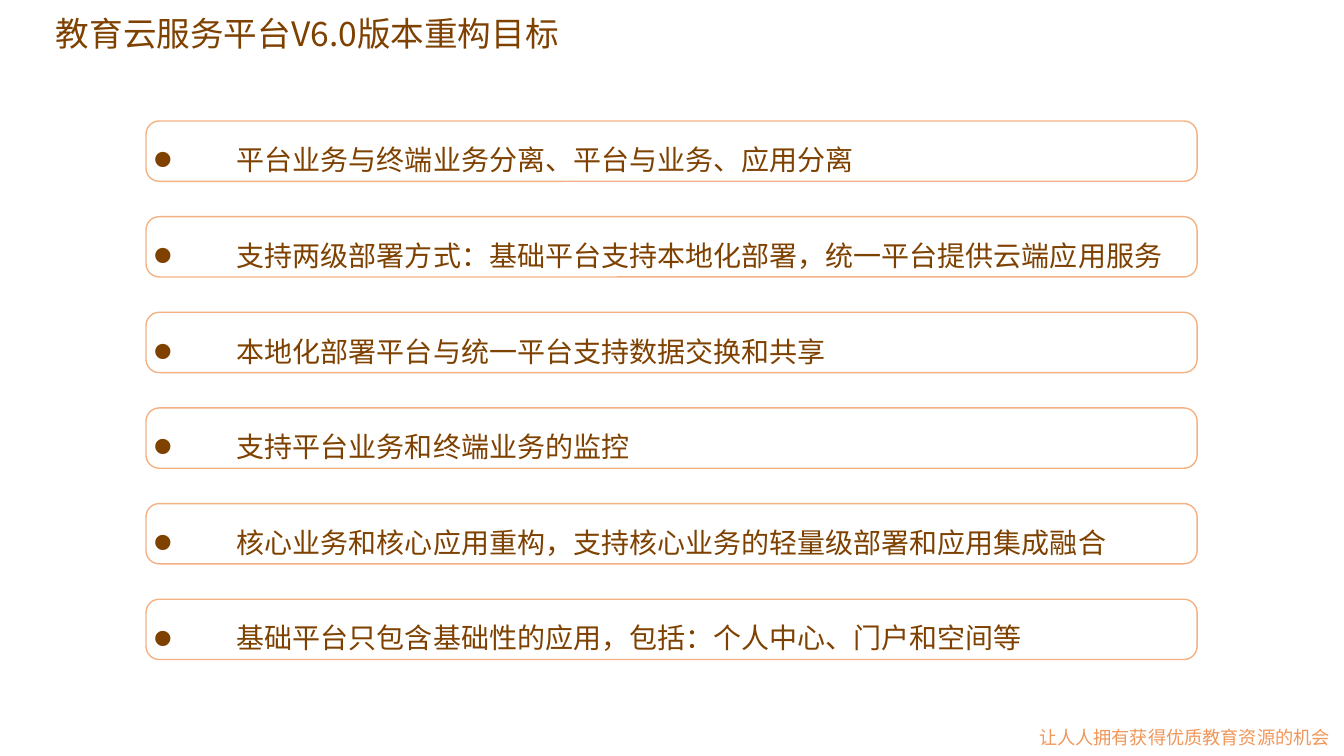
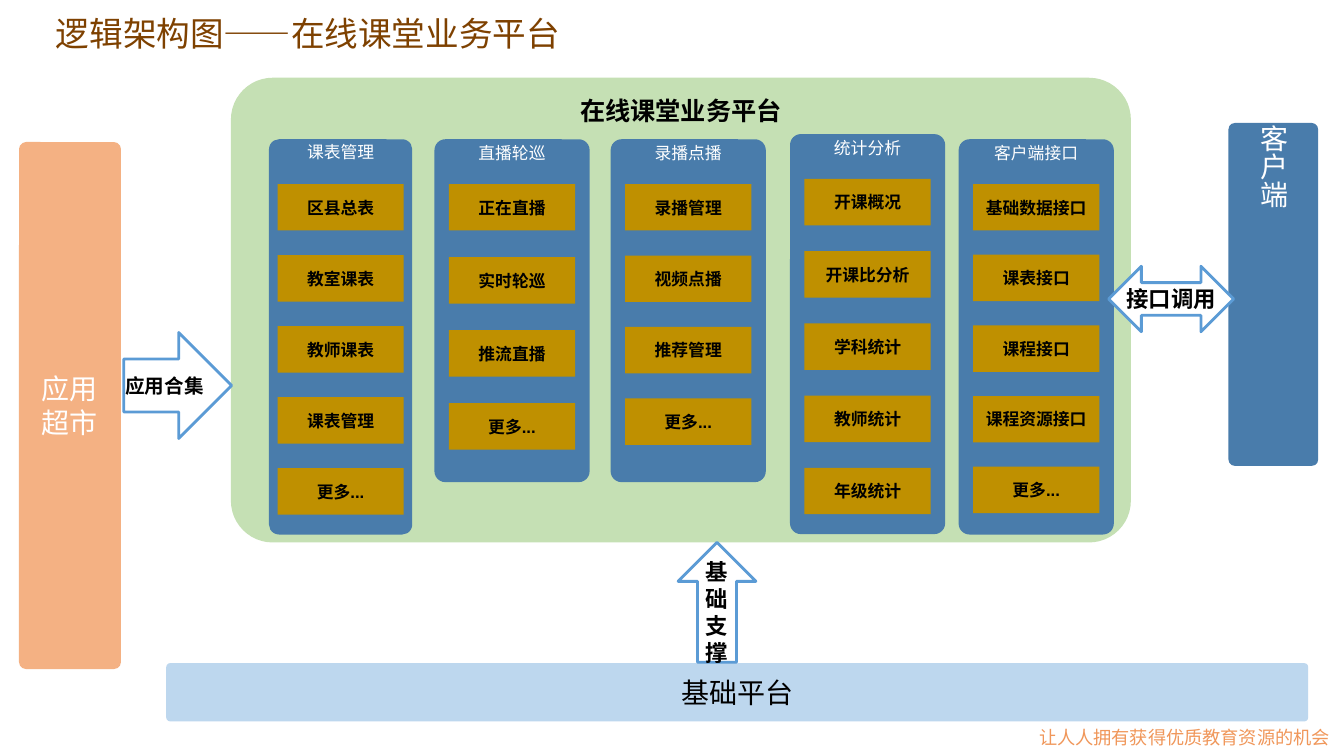
from dataclasses import dataclass

import pptx
import pptx.dml.color
import pptx.enum.shapes
import pptx.enum.text
import pptx.oxml
import pptx.oxml.ns
import pptx.util
from lxml import etree

Cm = pptx.util.Cm
Shape = pptx.enum.shapes.MSO_SHAPE
Align = pptx.enum.text.PP_ALIGN
Anchor = pptx.enum.text.MSO_ANCHOR
qn = pptx.oxml.ns.qn


@dataclass(frozen=True)
class Theme:
    brown: str = "7E4100"
    orange: str = "ED7D31"
    peach: str = "F4B183"
    white: str = "FFFFFF"
    black: str = "000000"
    green: str = "C5E0B4"
    blue: str = "497CAB"
    pale_blue: str = "BDD7EE"
    arrow_blue: str = "5B9BD5"
    gold: str = "BF9000"
    cjk: str = "Noto Sans CJK SC"
    footer_font: str = "Noto Sans CJK JP"
    label_font: str = "Arial"
    title_size: int = 24
    body_size: int = 20
    heading_size: int = 18
    support_size: int = 16
    arrow_size: int = 14
    footer_size: int = 13
    small_size: int = 12


THEME = Theme()


@dataclass(frozen=True)
class Box:
    left: float
    top: float
    width: float
    height: float

    def inner(self, left, top, width, height):
        return Box(self.left + left, self.top + top, width, height)

    def lengths(self):
        return Cm(self.left), Cm(self.top), Cm(self.width), Cm(self.height)


def rgb(color):
    return pptx.dml.color.RGBColor.from_string(color)


def write(shape, text, size, color, font=THEME.cjk, bold=False,
          align=Align.CENTER, anchor=Anchor.MIDDLE, insets=(0, 0)):
    frame = shape.text_frame
    frame.text = text
    frame.word_wrap = True
    frame.auto_size = pptx.enum.text.MSO_AUTO_SIZE.NONE
    frame.vertical_anchor = anchor
    frame.margin_left = frame.margin_right = Cm(insets[0])
    frame.margin_top = frame.margin_bottom = Cm(insets[1])
    east_asian = font if font == THEME.footer_font else THEME.cjk
    for para in frame.paragraphs:
        para.alignment = align
        for span in para.runs:
            span.font.size = pptx.util.Pt(size)
            span.font.bold = bold
            span.font.name = font
            span.font.color.rgb = rgb(color)
            properties = span.font._element
            properties.set("lang", "zh-CN")
            etree.SubElement(properties, qn("a:ea"), typeface=east_asian)


def add_block(page, kind, box, fill, line=None, line_width=1, corner=None):
    shape = page.shapes.add_shape(kind, *box.lengths())
    shape.shadow.inherit = False
    shape.fill.solid()
    shape.fill.fore_color.rgb = rgb(fill)
    if line:
        shape.line.color.rgb = rgb(line)
        shape.line.width = pptx.util.Pt(line_width)
    else:
        shape.line.fill.background()
    if corner is not None:
        shape.adjustments[0] = corner
    return shape


def add_panel(page, box, fill, text, size, color=THEME.white, anchor=Anchor.MIDDLE):
    panel = add_block(page, Shape.ROUNDED_RECTANGLE, box, fill, corner=0.07)
    write(panel, text, size, color, anchor=anchor)
    return panel


def add_arrow(page, kind, box, text, size):
    arrow = add_block(page, kind, box, THEME.white, THEME.arrow_blue, 2)
    write(arrow, text, size, THEME.black, THEME.label_font, True)


def add_page(deck, layout, title):
    page = deck.slides.add_slide(layout)
    heading = page.shapes.title
    heading.left, heading.top, heading.width, heading.height = Box(1.36, 0.28, 16.15, 1.14).lengths()
    write(heading, title, THEME.title_size, THEME.brown,
          align=Align.LEFT, anchor=Anchor.TOP, insets=(0.05, 0.05))
    return page


def set_layout_footer(layout, page):
    for placeholder in list(layout.placeholders):
        if placeholder.placeholder_format.idx:
            layout.shapes.element.remove(placeholder.element)
    motto = page.shapes.add_textbox(*Box(26.14, 18.26, 7.62, 0.69).lengths())
    write(motto, "让人人拥有获得优质教育资源的机会", THEME.footer_size, THEME.orange,
          THEME.footer_font, align=Align.LEFT, anchor=Anchor.TOP, insets=(0.05, 0.05))
    motto.text_frame.word_wrap = False
    layout.shapes.element.append(motto.element)
    veil = add_block(page, Shape.RECTANGLE, Box(0, 18.03, 33.87, 1.02), THEME.white)
    color = veil.element.spPr.find(qn("a:solidFill"))[0]
    etree.SubElement(color, qn("a:alpha"), val="20000")
    veil.element.xpath("./p:nvSpPr/p:cNvPr")[0].set("id", "4")
    layout.shapes.element.append(veil.element)


def add_goals(page, box, goals):
    pitch = 2.41
    for index, goal in enumerate(goals):
        row = add_block(page, Shape.ROUNDED_RECTANGLE,
                        box.inner(0, index * pitch, box.width, 1.52),
                        THEME.white, THEME.peach, corner=0.22)
        write(row, goal, THEME.body_size, THEME.brown, align=Align.LEFT, insets=(0.08, 0))
        para = row.text_frame.paragraphs[0]
        para.line_spacing = 1.5
        properties = para._p.get_or_add_pPr()
        properties.set("marL", str(Cm(2.11)))
        properties.set("indent", str(-Cm(2.11)))
        etree.SubElement(properties, qn("a:buSzPct"), val="200000")
        etree.SubElement(properties, qn("a:buFont"), typeface="Arial")
        etree.SubElement(properties, qn("a:buChar"), char="•")


def add_module(page, box, heading, pitch, functions):
    add_panel(page, box, THEME.blue, heading, THEME.small_size, anchor=Anchor.TOP)
    width, height = 3.18, 1.17
    for index, name in enumerate(functions):
        place = box.inner((box.width - width) / 2, 1.13 + index * pitch, width, height)
        cell = add_block(page, Shape.RECTANGLE, place, THEME.gold)
        write(cell, name, THEME.small_size, THEME.black, THEME.label_font, True, insets=(0.1, 0.1))


def add_platform(page, box, modules):
    platform = add_block(page, Shape.ROUNDED_RECTANGLE, box, THEME.green, corner=0.09)
    write(platform, "在线课堂业务平台", THEME.heading_size, THEME.black, THEME.label_font,
          True, anchor=Anchor.TOP, insets=(0.25, 0.13))
    for place, heading, pitch, functions in modules:
        add_module(page, box.inner(*place), heading, pitch, functions)


def add_surroundings(page, box):
    add_panel(page, box.inner(0, 0.48, 2.57, 13.28), THEME.peach, "应用\n超市", THEME.body_size)
    add_panel(page, box.inner(3.71, 13.61, 28.78, 1.47), THEME.pale_blue,
              "基础平台", THEME.body_size, THEME.black)
    client = add_panel(page, box.inner(30.48, 0, 2.26, 8.64), THEME.blue, "客户端", THEME.body_size)
    client.text_frame._txBody.bodyPr.set("vert", "eaVert")
    add_arrow(page, Shape.RIGHT_ARROW, box.inner(2.64, 5.28, 2.72, 2.67), "应用合集", THEME.arrow_size)
    add_arrow(page, Shape.UP_ARROW, box.inner(16.61, 10.57, 1.96, 3.02), "基础支撑", THEME.support_size)
    add_arrow(page, Shape.LEFT_RIGHT_ARROW, box.inner(27.46, 3.61, 3.15, 1.65),
              "接口调用", THEME.support_size)


GOALS = [
    "平台业务与终端业务分离、平台与业务、应用分离",
    "支持两级部署方式：基础平台支持本地化部署，统一平台提供云端应用服务",
    "本地化部署平台与统一平台支持数据交换和共享",
    "支持平台业务和终端业务的监控",
    "核心业务和核心应用重构，支持核心业务的轻量级部署和应用集成融合",
    "基础平台只包含基础性的应用，包括：个人中心、门户和空间等",
]

MODULES = [
    ((0.96, 1.55, 3.61, 9.96), "课表管理", 1.79,
     ["区县总表", "教室课表", "教师课表", "课表管理", "更多..."]),
    ((5.13, 1.55, 3.91, 8.64), "直播轮巡", 1.84,
     ["正在直播", "实时轮巡", "推流直播", "更多..."]),
    ((9.57, 1.55, 3.91, 8.64), "录播点播", 1.8,
     ["录播管理", "视频点播", "推荐管理", "更多..."]),
    ((14.09, 1.42, 3.91, 10.08), "统计分析", 1.82,
     ["开课概况", "开课比分析", "学科统计", "教师统计", "年级统计"]),
    ((18.34, 1.55, 3.91, 9.96), "客户端接口", 1.78,
     ["基础数据接口", "课表接口", "课程接口", "课程资源接口", "更多..."]),
]


def main():
    deck = pptx.Presentation()
    deck.slide_width, deck.slide_height = Cm(33.87), Cm(19.05)
    layout = deck.slide_layouts[5]

    goals_page = add_page(deck, layout, "教育云服务平台V6.0版本重构目标")
    set_layout_footer(layout, goals_page)
    add_goals(goals_page, Box(3.68, 3.05, 26.49, 13.57), GOALS)

    architecture_page = add_page(deck, layout, "逻辑架构图——在线课堂业务平台")
    add_platform(architecture_page, Box(5.82, 1.96, 22.68, 11.71), MODULES)
    add_surroundings(architecture_page, Box(0.48, 3.1, 32.74, 15.08))

    deck.save("out.pptx")


if __name__ == "__main__":
    main()
